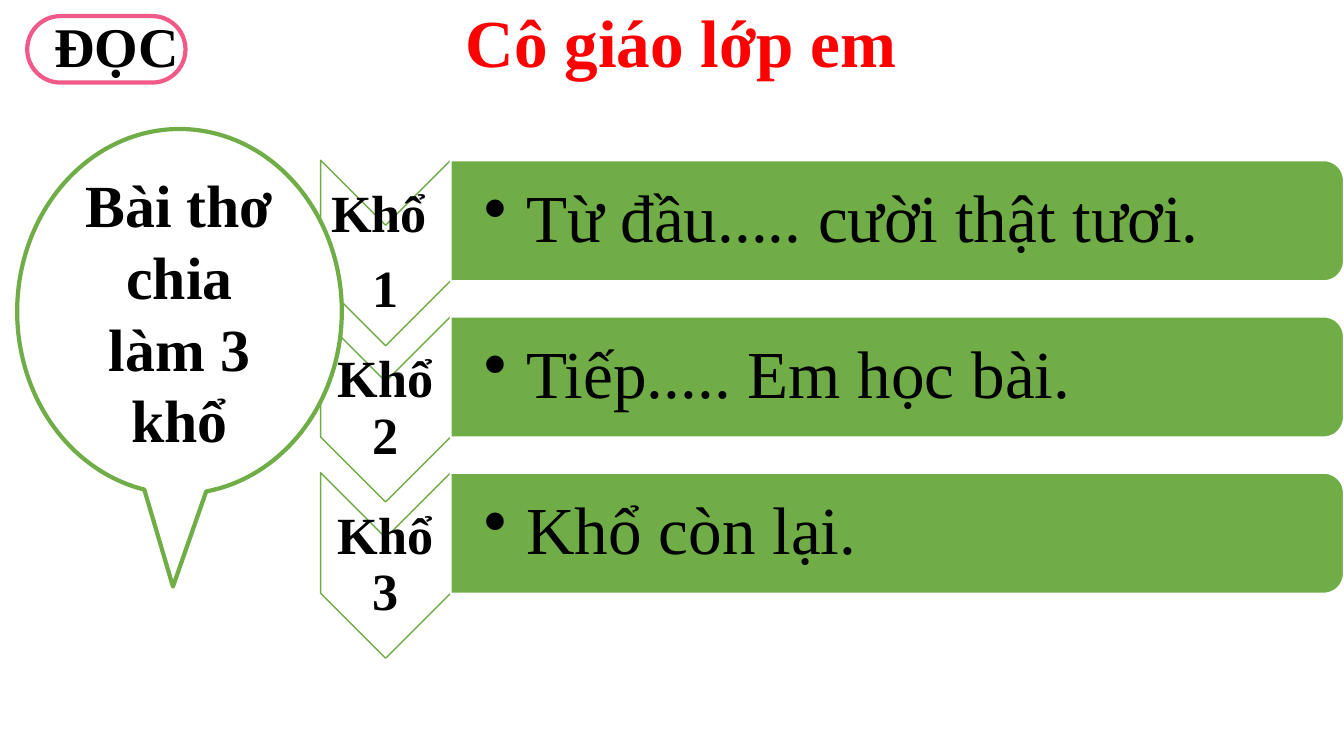
"""Build the reading slide that splits the poem into three stanzas."""
from math import cos, pi, sin

from lxml.etree import SubElement
from pptx import Presentation
from pptx.dml.color import RGBColor
from pptx.enum.shapes import MSO_SHAPE as Preset
from pptx.enum.text import MSO_ANCHOR as Anchor, PP_ALIGN as Align
from pptx.oxml.ns import qn
from pptx.util import Inches, Pt

TITLE = "Cô giáo lớp em"
SECTION = "ĐỌC"
CALLOUT = "Bài thơ chia làm 3 khổ"
STANZAS = [
    (["Khổ ", "1"], "Từ đầu..... cười thật tươi."),
    (["Khổ 2"], "Tiếp..... Em học bài."),
    (["Khổ 3"], "Khổ còn lại."),
]
FONT = "Times New Roman"
GREEN, PINK, RED, BLACK, WHITE = "70AD47", "F15A88", "FF0000", "000000", "FFFFFF"

FIRST_TOP, PITCH = 1.59, 1.55
CHEVRON_LEFT, CHEVRON_WIDTH, CHEVRON_HEIGHT = 3.18, 1.29, 1.84
PANEL_LEFT, PANEL_RIGHT, PANEL_HEIGHT, RADIUS = 4.47, 13.33, 1.2, 0.2
ARC_STEPS = 12


def color(value):
    return RGBColor.from_string(value)


def style(shape, fill, line, width):
    shape.shadow.inherit = False
    if fill:
        shape.fill.solid()
        shape.fill.fore_color.rgb = color(fill)
    else:
        shape.fill.background()
    shape.line.color.rgb = color(line)
    shape.line.width = Pt(width)


def write(shape, lines, size, bold=True, ink=BLACK, align=Align.CENTER,
          anchor=Anchor.MIDDLE, insets=(0.1, 0.05, 0.1, 0.05)):
    frame = shape.text_frame
    frame.word_wrap = True
    frame.vertical_anchor = anchor
    (frame.margin_left, frame.margin_top,
     frame.margin_right, frame.margin_bottom) = map(Inches, insets)
    for index, line in enumerate(lines):
        paragraph = frame.add_paragraph() if index else frame.paragraphs[0]
        paragraph.alignment = align
        run = paragraph.add_run()
        run.text = line
        run.font.name = FONT
        run.font.size = Pt(size)
        run.font.bold = bold
        run.font.color.rgb = color(ink)
    return frame.paragraphs


def tighten(paragraphs, space_after):
    for paragraph in paragraphs:
        paragraph.line_spacing = 0.9
        paragraph.space_after = Pt(space_after)


def add_bullet(paragraph):
    paragraph.level = 1
    properties = paragraph._p.get_or_add_pPr()
    properties.set("marL", str(Inches(0.42)))
    properties.set("indent", str(-Inches(0.42)))
    SubElement(properties, qn("a:buChar")).set("char", "•")


def add_outline(slide, points):
    corners = [(Inches(x), Inches(y)) for x, y in points]
    builder = slide.shapes.build_freeform(*corners[0])
    builder.add_line_segments(corners[1:], close=True)
    return builder.convert_to_shape()


def chevron_points(top):
    left, right = CHEVRON_LEFT, CHEVRON_LEFT + CHEVRON_WIDTH
    middle, notch = (left + right) / 2, CHEVRON_WIDTH / 2
    bottom = top + CHEVRON_HEIGHT
    return [(right, top), (right, bottom - notch), (middle, bottom),
            (left, bottom - notch), (left, top), (middle, top + notch)]


def panel_points(top):
    bottom = top + PANEL_HEIGHT
    points = [(PANEL_LEFT, bottom), (PANEL_LEFT, top)]
    for center_y, start in ((top + RADIUS, -pi / 2), (bottom - RADIUS, 0)):
        for step in range(ARC_STEPS + 1):
            angle = start + pi / 2 * step / ARC_STEPS
            points.append((PANEL_RIGHT - RADIUS + RADIUS * cos(angle),
                           center_y + RADIUS * sin(angle)))
    return points


def add_stanza(slide, top, label, extent):
    chevron = add_outline(slide, chevron_points(top))
    style(chevron, WHITE, GREEN, 1)
    tighten(write(chevron, label, 37.3, insets=(0.02, 0.67, 0.02, 0.67)), 13)

    panel = add_outline(slide, panel_points(top))
    style(panel, GREEN, WHITE, 1.5)
    paragraphs = write(panel, [extent], 48, bold=False, align=Align.LEFT,
                       insets=(0.33, 0.09, 0.09, 0.09))
    tighten(paragraphs, 7.2)
    add_bullet(paragraphs[0])


def add_preset(slide, preset, box, adjustments, fill, line):
    shape = slide.shapes.add_shape(preset, *map(Inches, box))
    for index, value in enumerate(adjustments):
        shape.adjustments[index] = value
    style(shape, fill, line, 3)
    return shape


def main():
    presentation = Presentation()
    presentation.slide_width = Inches(13.33)
    presentation.slide_height = Inches(7.5)
    slide = presentation.slides.add_slide(presentation.slide_layouts[6])

    for index, (label, extent) in enumerate(STANZAS):
        add_stanza(slide, FIRST_TOP + index * PITCH, label, extent)

    callout = add_preset(slide, Preset.OVAL_CALLOUT, (0.17, 1.28, 3.22, 3.62),
                         (-0.02, 0.754), WHITE, GREEN)
    write(callout, [CALLOUT], 42.7, insets=(0.13, 0.07, 0.13, 0.07))

    add_preset(slide, Preset.ROUNDED_RECTANGLE, (0.27, 0.16, 1.57, 0.66),
               (0.5,), None, PINK)
    section = slide.shapes.add_textbox(*map(Inches, (0.44, 0.07, 1.68, 0.77)))
    write(section, [SECTION], 40, align=Align.LEFT, anchor=Anchor.TOP)

    title = slide.shapes.add_textbox(*map(Inches, (3.38, -0.05, 6.75, 0.91)))
    write(title, [TITLE], 48, ink=RED, anchor=Anchor.TOP)

    presentation.save("out.pptx")


if __name__ == "__main__":
    main()
